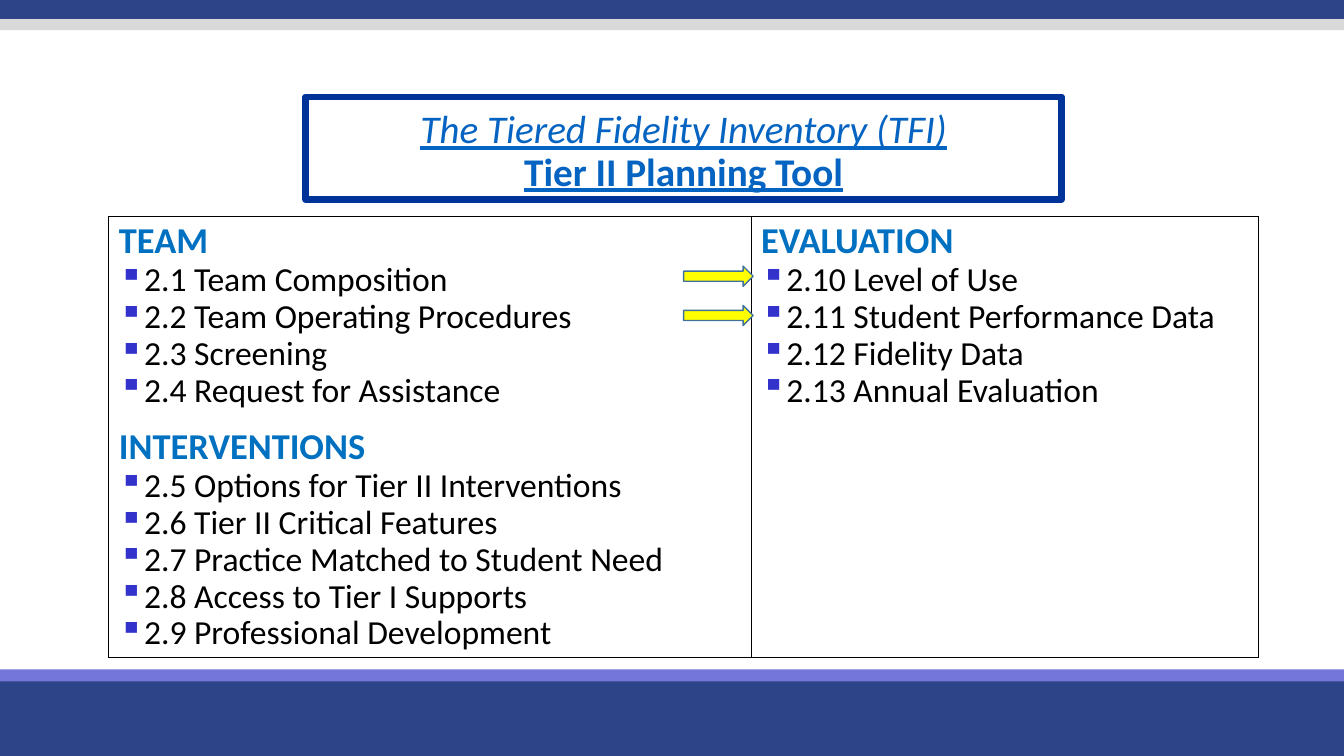
from lxml.etree import SubElement, fromstring
from pptx import Presentation
from pptx.dml.color import RGBColor
from pptx.enum.shapes import MSO_SHAPE
from pptx.enum.text import MSO_ANCHOR, PP_ALIGN
from pptx.oxml.ns import nsdecls, qn
from pptx.util import Inches, Pt

WHITE = RGBColor(0xFF, 0xFF, 0xFF)
BLACK = RGBColor(0, 0, 0)
NAVY = RGBColor(0x2E, 0x44, 0x88)
LILAC = RGBColor(0x74, 0x76, 0xDA)
GREY = RGBColor(0xD9, 0xD9, 0xD9)
FRAME = RGBColor(0x00, 0x33, 0x99)
LINK = RGBColor(0x05, 0x63, 0xC1)
HEADING = RGBColor(0x00, 0x70, 0xC0)
BULLET = RGBColor(0x33, 0x33, 0xCC)
YELLOW = RGBColor(0xFF, 0xFF, 0x00)
ARROW_LINE = RGBColor(0x42, 0x71, 0x9B)

BANDS = [
    (6.7, 0.8, NAVY),
    (6.64, 0.12, LILAC),
    (0, 0.19, NAVY),
    (0.19, 0.11, GREY),
]
COLUMNS = [
    [
        ("TEAM", [
            "2.1 Team Composition",
            "2.2 Team Operating Procedures",
            "2.3 Screening",
            "2.4 Request for Assistance",
        ]),
        ("INTERVENTIONS", [
            "2.5 Options for Tier II Interventions",
            "2.6 Tier II Critical Features",
            "2.7 Practice Matched to Student Need",
            "2.8 Access to Tier I Supports",
            "2.9 Professional Development",
        ]),
    ],
    [
        ("EVALUATION", [
            "2.10 Level of Use",
            "2.11 Student Performance Data",
            "2.12 Fidelity Data",
            "2.13 Annual Evaluation",
        ]),
    ],
]


def add_text(p, text, size=24, color=BLACK, bold=False, italic=False, underline=False):
    r = p.add_run()
    r.text = text
    font = r.font
    font.name = "Calibri"
    font.size = Pt(size)
    font.color.rgb = color
    font.bold, font.italic, font.underline = bold, italic, underline


class SlideBuilder:
    """Draws styled elements on one slide."""

    def __init__(self, prs):
        self.s = prs.slides.add_slide(prs.slide_layouts[6])
        self.line_spacing = 0.9

    def shape(self, kind, x, y, w, h, fill, line=None, line_width=1):
        sp = self.s.shapes.add_shape(kind, Inches(x), Inches(y), Inches(w), Inches(h))
        sp.shadow.inherit = False
        sp.fill.solid()
        sp.fill.fore_color.rgb = fill
        if line is None:
            sp.line.fill.background()
        else:
            sp.line.color.rgb = line
            sp.line.width = Pt(line_width)
        return sp

    def title(self, first, second):
        sp = self.shape(MSO_SHAPE.RECTANGLE, 3.03, 0.96, 7.5, 1.02, WHITE, FRAME, 4.5)
        tf = sp.text_frame
        tf.word_wrap = True
        tf.vertical_anchor = MSO_ANCHOR.BOTTOM
        p = tf.paragraphs[0]
        p.alignment = PP_ALIGN.CENTER
        p.line_spacing = self.line_spacing
        add_text(p, first, size=28, color=LINK, italic=True, underline=True)
        p.add_line_break()
        add_text(p, second, size=28, color=LINK, bold=True, underline=True)

    def bullet(self, p):
        pPr = p._p.get_or_add_pPr()
        pPr.set("marL", str(Inches(0.19)))
        pPr.set("indent", str(-Inches(0.19)))
        color = SubElement(pPr, qn("a:buClr"))
        SubElement(color, qn("a:srgbClr")).set("val", str(BULLET))
        SubElement(pPr, qn("a:buChar")).set("char", "▪")

    def borders(self, cell):
        tcPr = cell._tc.get_or_add_tcPr()
        for i, side in enumerate("LRTB"):
            tcPr.insert(i, fromstring(
                f'<a:ln{side} {nsdecls("a")} w="{Pt(1)}"><a:solidFill>'
                f'<a:srgbClr val="{BLACK}"/></a:solidFill></a:ln{side}>'))

    def fill_cell(self, cell, groups):
        cell.fill.solid()
        cell.fill.fore_color.rgb = WHITE
        self.borders(cell)
        tf = cell.text_frame
        for i, (heading, items) in enumerate(groups):
            p = tf.add_paragraph() if i else tf.paragraphs[0]
            p.line_spacing = self.line_spacing
            if i:
                p.space_before = Pt(13)
            add_text(p, heading, size=26, color=HEADING, bold=True)
            for item in items:
                p = tf.add_paragraph()
                p.line_spacing = self.line_spacing
                self.bullet(p)
                add_text(p, item)

    def table(self, x, y, widths, height, columns):
        frame = self.s.shapes.add_table(
            1, len(widths), Inches(x), Inches(y), Inches(sum(widths)), Inches(height))
        table = frame.table
        for i, (width, groups) in enumerate(zip(widths, columns)):
            table.columns[i].width = Inches(width)
            self.fill_cell(table.cell(0, i), groups)


def main():
    prs = Presentation()
    prs.slide_width, prs.slide_height = Inches(13.33), Inches(7.5)
    slide = SlideBuilder(prs)
    for y, height, color in BANDS:
        slide.shape(MSO_SHAPE.RECTANGLE, 0, y, 13.33, height, color)
    slide.table(1.08, 2.15, [6.37, 5.03], 4.3, COLUMNS)
    for y in (2.64, 3.03):
        slide.shape(MSO_SHAPE.RIGHT_ARROW, 6.78, y, 0.69, 0.2, YELLOW, ARROW_LINE)
    slide.title("The Tiered Fidelity Inventory (TFI)", "Tier II Planning Tool")
    prs.save("out.pptx")


if __name__ == "__main__":
    main()
